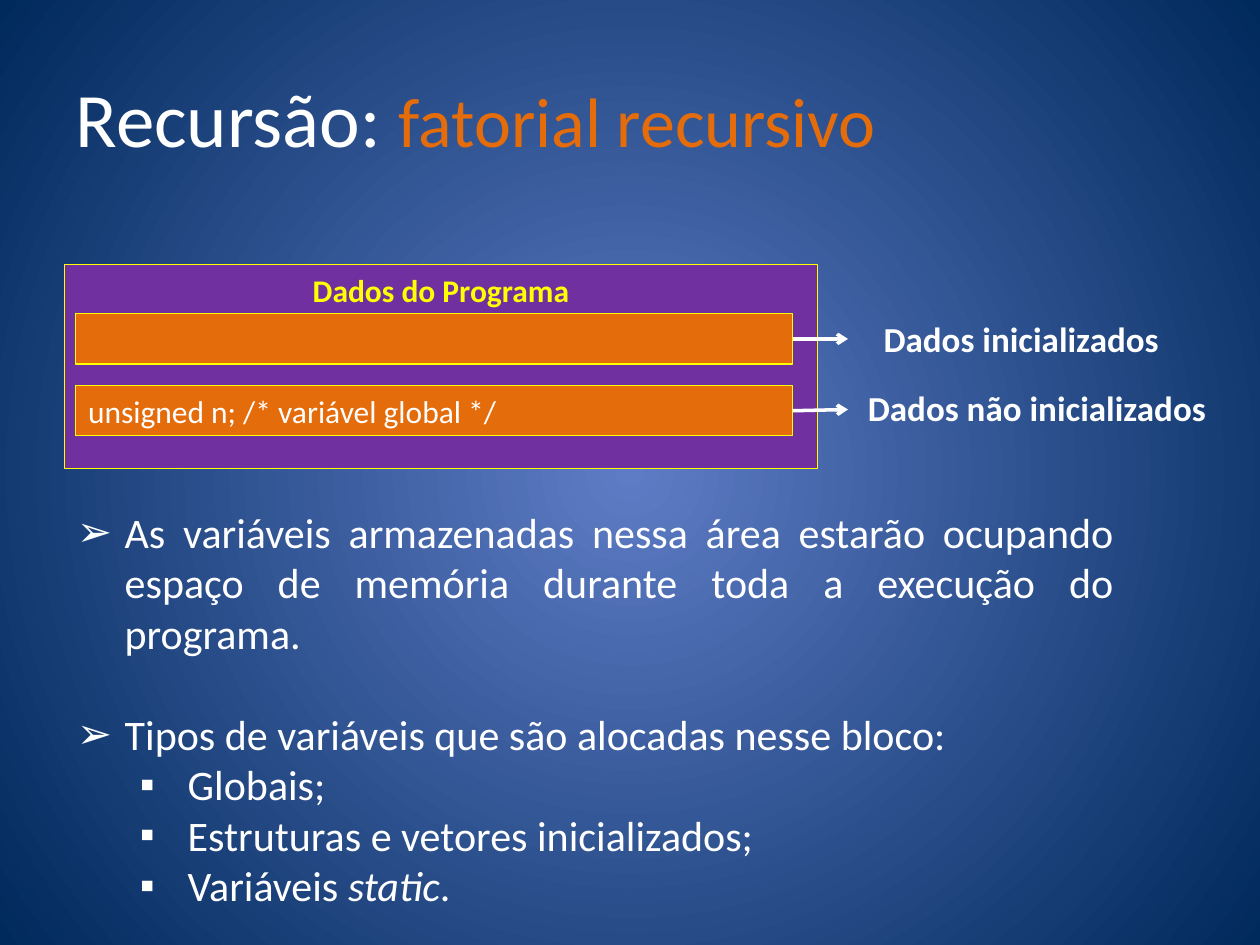
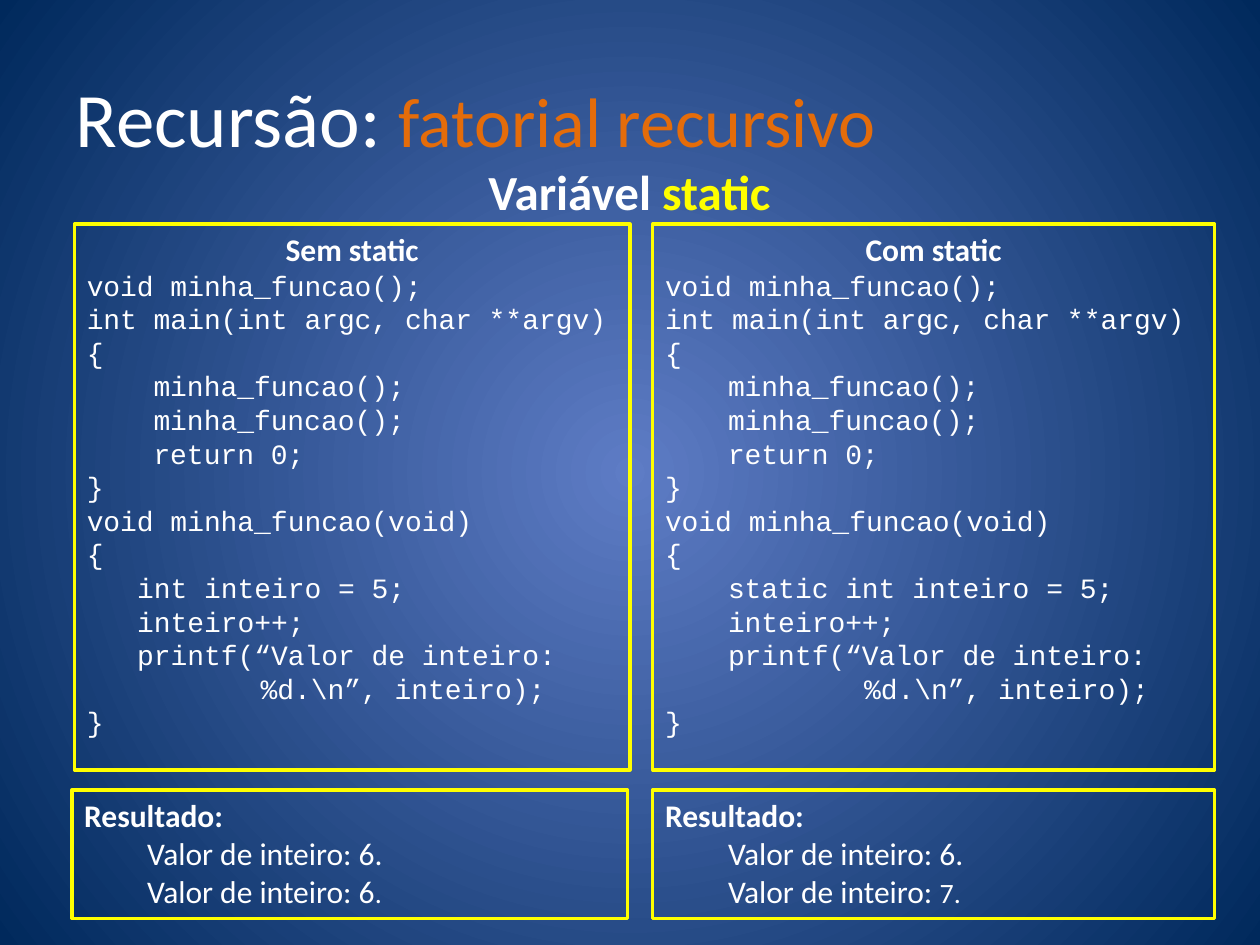
from dataclasses import dataclass

from lxml.etree import SubElement
from pptx import Presentation
from pptx.dml.color import RGBColor
from pptx.enum.shapes import MSO_CONNECTOR, MSO_SHAPE
from pptx.enum.text import MSO_ANCHOR, MSO_AUTO_SIZE, PP_ALIGN
from pptx.oxml.ns import qn
from pptx.util import Inches, Pt

WHITE, YELLOW, ORANGE, PURPLE = "FFFFFF", "FFFF00", "E46C0A", "7030A0"
GLOW, NAVY = "5E7CC5", "00295C"
SANS, MONO = "Calibri", "Courier New"
LEFT, MID, JUST = PP_ALIGN.LEFT, PP_ALIGN.CENTER, PP_ALIGN.JUSTIFY


@dataclass
class Box:
    left: float
    top: float
    width: float
    height: float

    def place(self) -> tuple:
        return tuple(Inches(n) for n in (self.left, self.top, self.width, self.height))


@dataclass
class Row:
    top: float
    code: str
    label: str
    spot: Box
    tip: float


@dataclass
class Panel:
    head: str
    left: float
    base: float
    width: float
    call: float
    inner: float
    hang: float
    prefix: str
    value: str
    small: str


ROWS = [
    Row(2.49, "", "Dados inicializados", Box(6.73, 2.47, 2.75, 0.44), 2.69),
    Row(3.06, "unsigned n; /* variável global */", "Dados não inicializados",
        Box(6.76, 3.02, 2.94, 0.44), 3.25),
]
PANELS = [
    Panel("Sem static", 0.59, 0.57, 4.41, 0.53, 0.4, 1.38, "", "Valor de inteiro: 6", "."),
    Panel("Com static", 5.18, 5.18, 4.46, 0.5, 0.5, 1.58, "static ", "Valor de inteiro: ", "7."),
]


def paint(code: str) -> RGBColor:
    return RGBColor.from_string(code)


def write(par, text: str, size: float = 24, color: str = WHITE, font: str = SANS,
          bold: bool = False, italic: bool = False) -> None:
    run = par.add_run()
    run.text = text
    face = run.font
    face.name, face.size, face.bold, face.italic = font, Pt(size), bold, italic
    face.color.rgb = paint(color)


def line(frame, align=LEFT, margin: float = 0, first: float = 0, level: int = 0,
         before: float = 0, bullet: str = ""):
    par = frame.paragraphs[0]
    if par.runs:
        par = frame.add_paragraph()
    par.alignment, par.level, par.space_before = align, level, Pt(before)
    props = par._p.get_or_add_pPr()
    props.set("marL", str(Inches(margin)))
    props.set("indent", str(Inches(first)))
    if bullet:
        SubElement(props, qn("a:buChar")).set("char", bullet)
    return par


def setup(frame, anchor=MSO_ANCHOR.TOP):
    frame.word_wrap = True
    frame.auto_size = MSO_AUTO_SIZE.NONE
    frame.vertical_anchor = anchor
    return frame


def fit(holder, box: Box, anchor=MSO_ANCHOR.TOP):
    holder.left, holder.top, holder.width, holder.height = box.place()
    return setup(holder.text_frame, anchor)


def block(slide, box: Box, fill: str = "", weight: float = 0.75):
    shape = slide.shapes.add_shape(MSO_SHAPE.RECTANGLE, *box.place())
    shape.shadow.inherit = False
    if fill:
        shape.fill.solid()
        shape.fill.fore_color.rgb = paint(fill)
    else:
        shape.fill.background()
    shape.line.color.rgb = paint(YELLOW)
    shape.line.width = Pt(weight)
    return setup(shape.text_frame)


def label(slide, box: Box):
    return setup(slide.shapes.add_textbox(*box.place()).text_frame)


def arrow(slide, left: float, top: float, right: float, tip: float) -> None:
    link = slide.shapes.add_connector(
        MSO_CONNECTOR.STRAIGHT, Inches(left), Inches(top), Inches(right), Inches(tip))
    link.line.color.rgb = paint(WHITE)
    link.line.width = Pt(2)
    SubElement(link.line._get_or_add_ln(), qn("a:tailEnd")).set("type", "arrow")
    SubElement(link._element.spPr, qn("a:effectLst"))


def backdrop(master) -> None:
    fill = master.background.fill
    fill.gradient()
    for stop, color in zip(fill.gradient_stops, (GLOW, NAVY)):
        stop.color.rgb = paint(color)
    grad = master.element.find(".//" + qn("a:gradFill"))
    grad.remove(grad.find(qn("a:lin")))
    route = SubElement(grad, qn("a:path"))
    route.set("path", "circle")
    focus = SubElement(route, qn("a:fillToRect"))
    for side in "ltrb":
        focus.set(side, "50000")


def start(deck, layout: int):
    slide = deck.slides.add_slide(deck.slide_layouts[layout])
    par = line(fit(slide.shapes.title, Box(0.5, 0.3, 9, 1.25), MSO_ANCHOR.MIDDLE))
    write(par, "Recursão: ", size=44)
    write(par, "fatorial recursivo", size=40, color=ORANGE)
    return slide


def memory(deck) -> None:
    slide = start(deck, 1)
    body = fit(slide.placeholders[1], Box(0.51, 3.97, 8.43, 3.32))
    main = dict(margin=0.38, first=-0.38, bullet="➢")
    write(line(body, JUST, **main), "As variáveis armazenadas nessa área estarão ocupando "
          "espaço de memória durante toda a execução do programa.")
    write(line(body, before=29, **main), "Tipos de variáveis que são alocadas nesse bloco:")
    for text in ("Globais;", "Estruturas e vetores inicializados;", "Variáveis "):
        par = line(body, margin=0.88, first=-0.38, level=1, bullet="▪")
        write(par, text)
    write(par, "static", italic=True)
    write(par, ".")

    data = block(slide, Box(0.51, 2.1, 5.98, 1.62), PURPLE)
    write(line(data, MID), "Dados do Programa", size=18, color=YELLOW, bold=True)
    for row in ROWS:
        bar = Box(0.6, row.top, 5.69, 0.4)
        frame = block(slide, bar, ORANGE)
        if row.code:
            write(line(frame), row.code, size=18)
        edge = bar.left + bar.width
        arrow(slide, edge, row.top + bar.height / 2, 6.73, row.tip)
        write(line(label(slide, row.spot), MID), row.label, size=20, bold=True)


def listing(panel: Panel) -> list[tuple[str, float, float]]:
    call, inner, hang = panel.call, panel.inner, panel.hang
    return [
        ("void minha_funcao();", 0, 0),
        ("int main(int argc, char **argv)", 0, 0),
        ("{", 0, 0),
        ("minha_funcao();", call, 0),
        ("minha_funcao();", call, 0),
        ("return 0;", call, 0),
        ("}", 0, 0),
        ("void minha_funcao(void)", 0, 0),
        ("{", 0, 0),
        (panel.prefix + "int inteiro = 5;", inner, 0),
        ("inteiro++;", inner, 0),
        ("printf(“Valor de inteiro: %d.\\n”, inteiro);", hang, inner - hang),
        ("}", 0, 0),
    ]


def static(deck) -> None:
    slide = start(deck, 5)
    par = line(label(slide, Box(3.62, 1.23, 2.75, 0.57)), MID)
    write(par, "Variável ", size=28, bold=True)
    write(par, "static", size=28, color=YELLOW, bold=True)
    for panel in PANELS:
        code = block(slide, Box(panel.left, 1.78, panel.width, 4.33), weight=2)
        write(line(code, MID), panel.head, size=18, bold=True)
        for text, margin, first in listing(panel):
            write(line(code, margin=margin, first=first), text, size=16, font=MONO)
        result = block(slide, Box(panel.base, 6.27, panel.width, 1.02), weight=2)
        write(line(result), "Resultado:", size=18, bold=True)
        write(line(result, margin=0.5, level=1), "Valor de inteiro: 6.", size=18)
        last = line(result, margin=0.5, level=1)
        write(last, panel.value, size=18)
        write(last, panel.small, size=16)


def main() -> None:
    deck = Presentation()
    deck.slide_width, deck.slide_height = Inches(10), Inches(7.5)
    backdrop(deck.slide_master)
    memory(deck)
    static(deck)
    deck.save("out.pptx")


if __name__ == "__main__":
    main()
